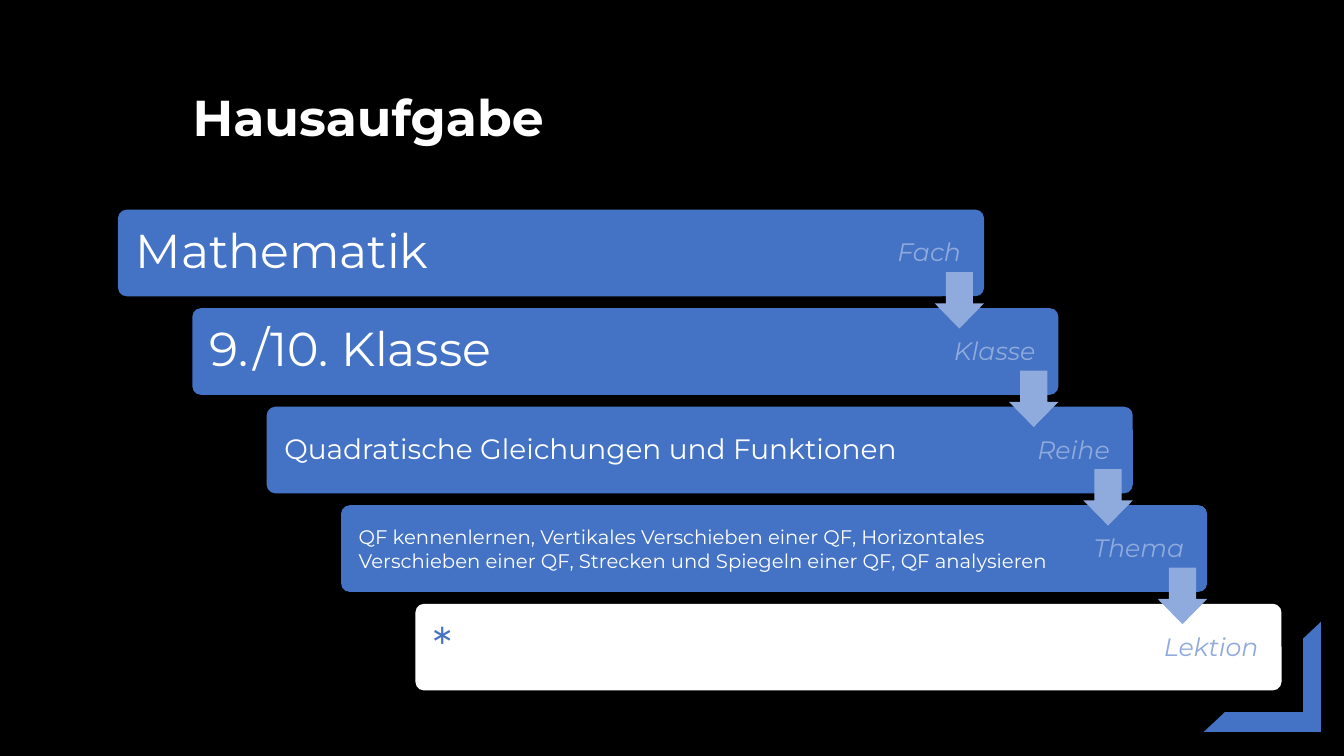
"""Build the homework slide with its staircase of five bars."""
from pptx import Presentation
from pptx.dml.color import RGBColor
from pptx.enum import shapes, text
from pptx.util import Inches, Pt

FONT = "Montserrat"
BLUE, PALE, WHITE, BLACK = "4472C4", "8FAADC", "FFFFFF", "000000"
TITLE = "Hausaufgabe"
STEPS = [
    ("Mathematik", "Fach", 34, 0.9, BLUE, WHITE),
    ("9./10. Klasse", "Klasse", 34, 0.9, BLUE, WHITE),
    ("Quadratische Gleichungen und Funktionen", "Reihe", 20, 0.9, BLUE, WHITE),
    ("QF kennenlernen, Vertikales Verschieben einer QF, Horizontales "
     "Verschieben einer QF, Strecken und Spiegeln einer QF, QF analysieren",
     "Thema", 14, 1.0, BLUE, WHITE),
    ("*", "Lektion", 34, 0.9, WHITE, BLUE),
]
FIRST, LAST = (1.17, 2.08), (4.12, 5.99)
BAR_W, BAR_H = 8.59, 0.86


def rgb(color):
    return RGBColor.from_string(color)


def box(*lengths):
    return [Inches(n) for n in lengths]


def write(sp, words, size, color, align=text.PP_ALIGN.LEFT, bold=False, italic=False):
    tf = sp.text_frame
    tf.text = words
    tf.word_wrap = True
    p = tf.paragraphs[0]
    p.alignment = align
    font = p.runs[0].font
    font.name, font.size, font.bold, font.italic = FONT, Pt(size), bold, italic
    font.color.rgb = rgb(color)
    return tf


def add_shape(s, kind, place, fill, *adjustments):
    sp = s.shapes.add_shape(kind, *box(*place))
    for i, value in enumerate(adjustments):
        sp.adjustments[i] = value
    sp.shadow.inherit = False
    sp.fill.solid()
    sp.fill.fore_color.rgb = rgb(fill)
    sp.line.fill.background()
    return sp


def add_bar(s, x, y, words, size, spacing, fill, color, right):
    bar = add_shape(s, shapes.MSO_SHAPE.ROUNDED_RECTANGLE, (x, y, BAR_W, BAR_H), fill, 0.1)
    tf = write(bar, words, size, color)
    tf.vertical_anchor = text.MSO_ANCHOR.MIDDLE
    tf.margin_left, tf.margin_top, tf.margin_right, tf.margin_bottom = box(0.15, 0.15, right, 0.15)
    tf.paragraphs[0].line_spacing = spacing


def main():
    prs = Presentation()
    prs.slide_width, prs.slide_height = box(13.33, 7.5)
    s = prs.slides.add_slide(prs.slide_layouts[5])
    s.background.fill.solid()
    s.background.fill.fore_color.rgb = rgb(BLACK)

    title = s.shapes.title
    title.left, title.top, title.width, title.height = box(1.81, 0.8, 7.78, 0.71)
    tf = write(title, TITLE, 36, WHITE, bold=True)
    tf.vertical_anchor = text.MSO_ANCHOR.MIDDLE
    corner = add_shape(s, shapes.MSO_SHAPE.HALF_FRAME, (11.94, 6.17, 1.16, 1.09), BLUE, 0.18, 0.16)
    corner.rotation = 180

    gaps = len(STEPS) - 1
    places = [tuple(a + i * (b - a) / gaps for a, b in zip(FIRST, LAST))
              for i in range(len(STEPS))]
    for i, ((x, y), (words, _, size, spacing, fill, color)) in enumerate(zip(places, STEPS)):
        add_bar(s, x, y, words, size, spacing, fill, color, 1.44 if i else 1.12)
    for x, y in places[:-1]:
        add_shape(s, shapes.MSO_SHAPE.DOWN_ARROW, (x + 8.1, y + 0.62, 0.49, 0.56), PALE, 0.55, 0.51)
    for (x, y), step in zip(places, STEPS):
        label = s.shapes.add_textbox(*box(x + 6.67, y + 0.22, 1.79, 0.4))
        write(label, step[1], 18, PALE, text.PP_ALIGN.RIGHT, italic=True)

    prs.save("out.pptx")


if __name__ == "__main__":
    main()
